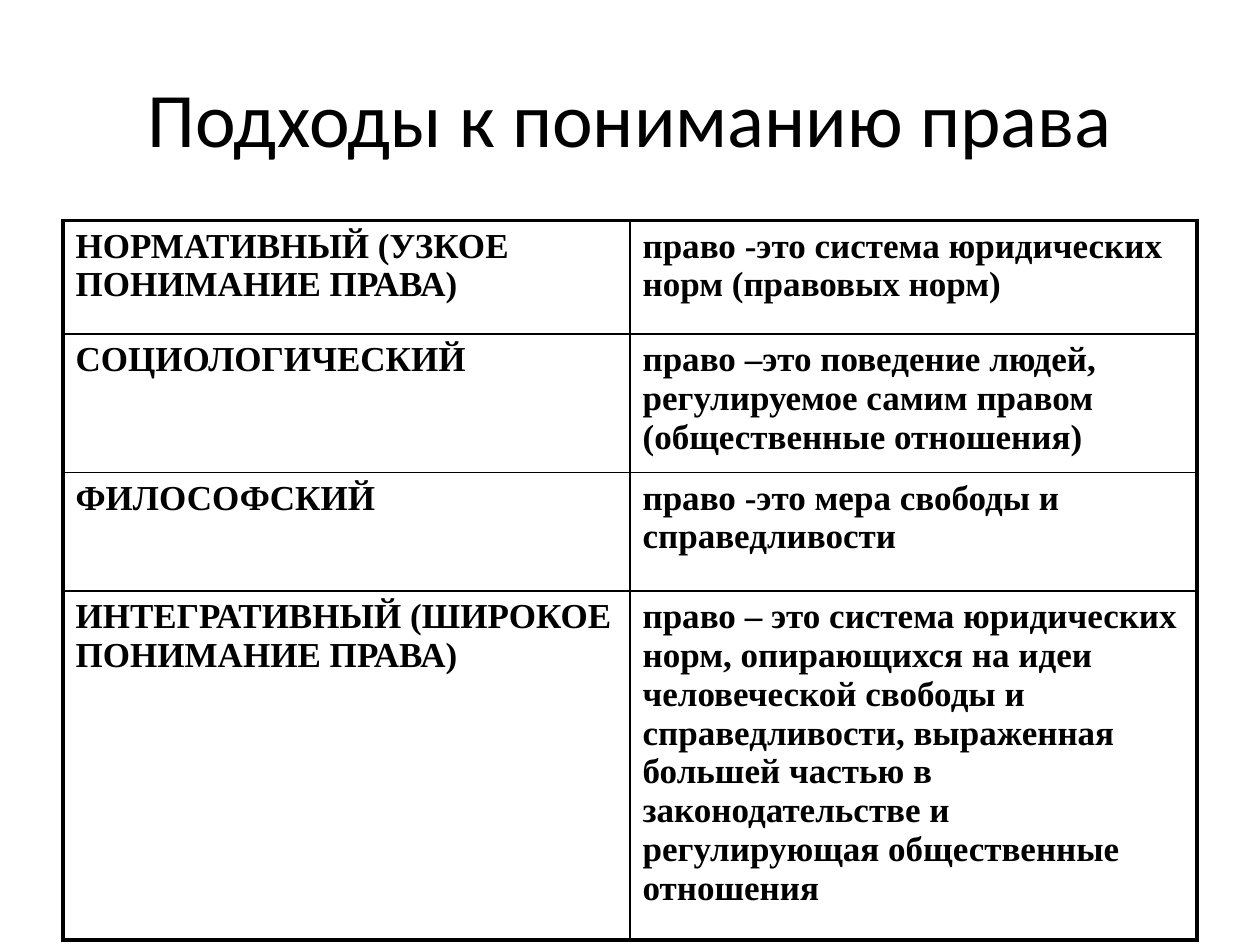
from dataclasses import dataclass

from lxml import etree
from pptx import Presentation
from pptx.dml.color import RGBColor
from pptx.enum.text import MSO_ANCHOR, PP_ALIGN
from pptx.oxml.ns import qn
from pptx.util import Pt

CENTER = PP_ALIGN.CENTER
LEFT = PP_ALIGN.LEFT
MIDDLE = MSO_ANCHOR.MIDDLE
TOP = MSO_ANCHOR.TOP
TITLE_ONLY = 5


@dataclass(frozen=True)
class Theme:
    """Colours, fonts and sizes of the slide."""

    ink: str = "000000"
    paper: str = "FFFFFF"
    title_font: str = "Calibri"
    table_font: str = "Times New Roman"
    title_size: float = 44
    table_size: float = 20
    outer_line: float = 2.25
    inner_line: float = 1


THEME = Theme()
MARGIN = 36
CONTENT_WIDTH = 648
TABLE_TOP = 126
ROW_HEIGHTS = (64.8, 79.2, 67.7, 199.4)
APPROACHES = (
    ("НОРМАТИВНЫЙ (УЗКОЕ ПОНИМАНИЕ ПРАВА)",
     "право -это система юридических норм (правовых норм)"),
    ("СОЦИОЛОГИЧЕСКИЙ",
     "право –это поведение людей, регулируемое самим правом "
     "(общественные отношения)"),
    ("ФИЛОСОФСКИЙ",
     "право -это мера свободы и справедливости"),
    ("ИНТЕГРАТИВНЫЙ (ШИРОКОЕ ПОНИМАНИЕ ПРАВА)",
     "право – это система юридических норм, опирающихся на идеи "
     "человеческой свободы и справедливости, выраженная большей частью в "
     "законодательстве и регулирующая общественные отношения"),
)


def write_text(text_frame, text, font_name, size, bold, alignment):
    """Write one formatted run into the first paragraph."""
    paragraph = text_frame.paragraphs[0]
    paragraph.alignment = alignment
    run = paragraph.add_run()
    run.text = text
    run.font.name = font_name
    run.font.size = Pt(size)
    run.font.bold = bold
    run.font.color.rgb = RGBColor.from_string(THEME.ink)


def add_title(slide, text):
    """Place and fill the title placeholder."""
    title = slide.shapes.title
    title.left, title.top = Pt(MARGIN), Pt(21.6)
    title.width, title.height = Pt(CONTENT_WIDTH), Pt(90)
    title.text_frame.vertical_anchor = MIDDLE
    title.text_frame.word_wrap = True
    write_text(title.text_frame, text, THEME.title_font, THEME.title_size,
               False, CENTER)


def set_borders(cell, outer_sides):
    """Draw thick lines on the outer sides of a cell and thin ones elsewhere."""
    properties = cell._tc.get_or_add_tcPr()
    for index, side in enumerate("LRTB"):
        width = THEME.outer_line if side in outer_sides else THEME.inner_line
        line = etree.Element(qn(f"a:ln{side}"), w=str(Pt(width)))
        fill = etree.SubElement(line, qn("a:solidFill"))
        etree.SubElement(fill, qn("a:srgbClr"), val=THEME.ink)
        properties.insert(index, line)


def fill_cell(cell, text, outer_sides):
    """Format one table cell and write its text."""
    cell.margin_left = cell.margin_right = Pt(7.2)
    cell.margin_top = cell.margin_bottom = Pt(3.6)
    cell.vertical_anchor = TOP
    cell.fill.background()
    set_borders(cell, outer_sides)
    write_text(cell.text_frame, text, THEME.table_font, THEME.table_size,
               True, LEFT)


def add_approach_table(slide, rows):
    """Add the two-column table of approaches."""
    frame = slide.shapes.add_table(
        len(rows), 2, Pt(MARGIN), Pt(TABLE_TOP),
        Pt(CONTENT_WIDTH), Pt(sum(ROW_HEIGHTS)))
    table = frame.table
    table.first_row = False
    table.horz_banding = False
    for row_index, texts in enumerate(rows):
        table.rows[row_index].height = Pt(ROW_HEIGHTS[row_index])
        edges = "T" if row_index == 0 else ""
        edges += "B" if row_index == len(rows) - 1 else ""
        for column_index, text in enumerate(texts):
            fill_cell(table.cell(row_index, column_index), text,
                      edges + "LR"[column_index])


def main():
    """Build and save the slide."""
    presentation = Presentation()
    presentation.slide_width = Pt(720)
    presentation.slide_height = Pt(540)
    slide = presentation.slides.add_slide(
        presentation.slide_layouts[TITLE_ONLY])
    background = slide.background.fill
    background.solid()
    background.fore_color.rgb = RGBColor.from_string(THEME.paper)
    add_title(slide, "Подходы к пониманию права")
    add_approach_table(slide, APPROACHES)
    presentation.save("out.pptx")


if __name__ == "__main__":
    main()
